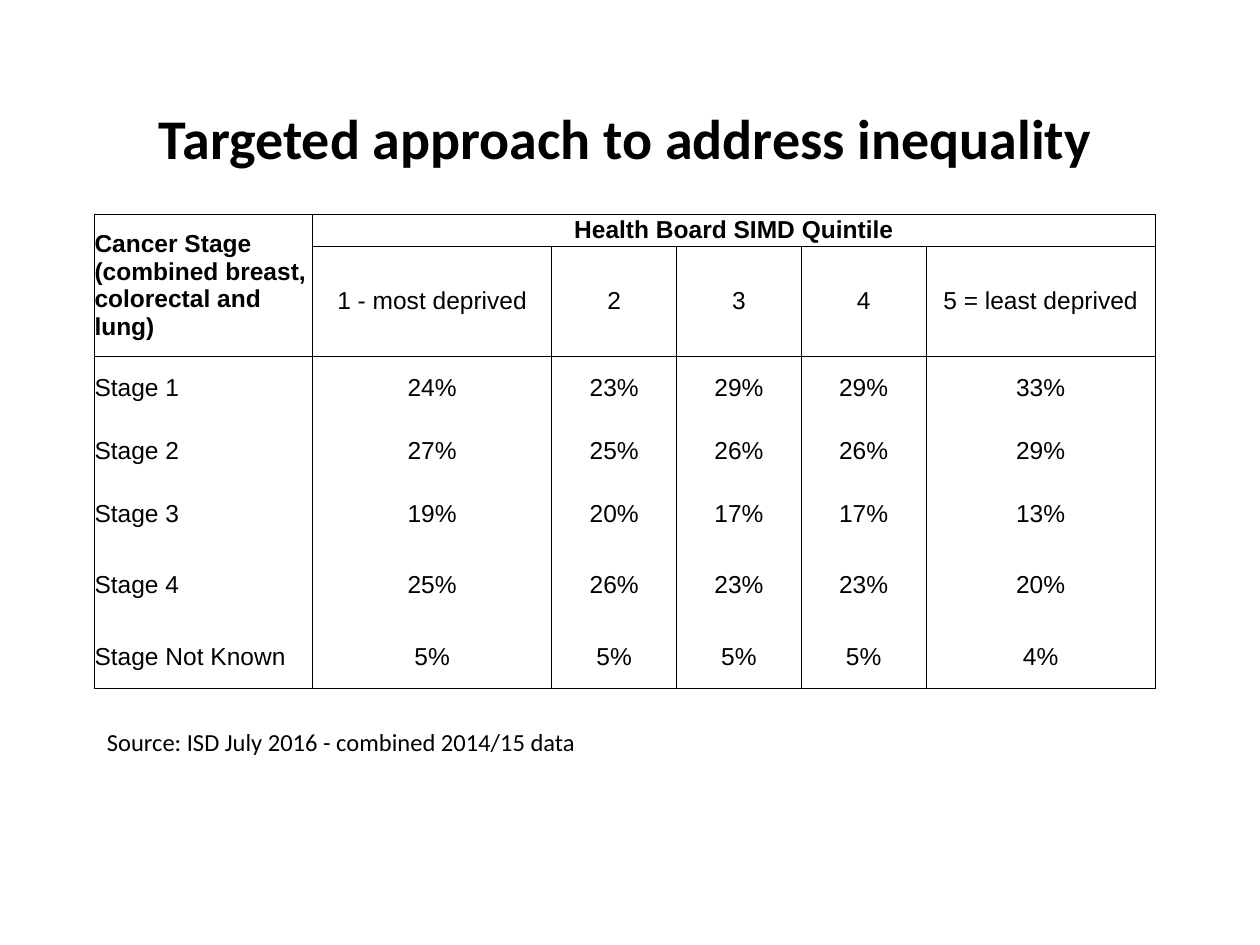
from lxml.etree import SubElement
from pptx import Presentation
from pptx.dml.color import RGBColor
from pptx.enum.text import MSO_ANCHOR, MSO_AUTO_SIZE, PP_ALIGN
from pptx.oxml.ns import qn
from pptx.util import Inches, Pt

WIDTH, HEIGHT = 10, 7.5
BLACK, WHITE = "000000", "FFFFFF"
COLUMNS = [1.73, 1.9, 0.99, 0.99, 0.99, 1.82]
ROWS = [0.25, 0.5, 0.5, 0.5, 0.5, 0.64, 0.5]
HEADER_ROWS = 2
CELLS = [
    ["Cancer Stage (combined breast, colorectal and lung)", "Health Board SIMD Quintile", "", "", "", ""],
    ["", "1 - most deprived", "2", "3", "4", "5 = least deprived"],
    ["Stage 1", "24%", "23%", "29%", "29%", "33%"],
    ["Stage 2", "27%", "25%", "26%", "26%", "29%"],
    ["Stage 3", "19%", "20%", "17%", "17%", "13%"],
    ["Stage 4", "25%", "26%", "23%", "23%", "20%"],
    ["Stage Not Known", "5%", "5%", "5%", "5%", "4%"],
]


def colour(value):
    return RGBColor.from_string(value)


def share_box(left, top, width, height):
    return (Inches(left * WIDTH), Inches(top * HEIGHT),
            Inches(width * WIDTH), Inches(height * HEIGHT))


def place(shape, box):
    shape.left, shape.top, shape.width, shape.height = box


def write(frame, text, size, font, bold=False, align=PP_ALIGN.LEFT):
    para = frame.paragraphs[0]
    para.alignment = align
    span = para.add_run()
    span.text = text
    span.font.size = Pt(size)
    span.font.name = font
    span.font.bold = bold
    span.font.color.rgb = colour(BLACK)


def set_borders(cell, sides):
    properties = cell._tc.get_or_add_tcPr()
    for side in "LRTB":
        line = SubElement(properties, qn(f"a:ln{side}"), w=str(Pt(0.5)))
        if side in sides:
            fill = SubElement(line, qn("a:solidFill"))
            SubElement(fill, qn("a:srgbClr"), val=BLACK)
        else:
            SubElement(line, qn("a:noFill"))


def row_sides(row):
    if row < HEADER_ROWS:
        return "LRTB"
    if row == HEADER_ROWS:
        return "LRT"
    return "LRB" if row == len(ROWS) - 1 else "LR"


def format_cell(cell, text, row, column):
    set_borders(cell, row_sides(row))
    cell.fill.solid()
    cell.fill.fore_color.rgb = colour(WHITE)
    cell.margin_left = cell.margin_right = cell.margin_top = cell.margin_bottom = 0
    cell.vertical_anchor = MSO_ANCHOR.MIDDLE
    if text:
        align = PP_ALIGN.CENTER if column else PP_ALIGN.LEFT
        write(cell.text_frame, text, 14, "Arial", row == 0, align)


def add_title(page, box):
    title = page.shapes.title
    place(title, box)
    title.text_frame.word_wrap = True
    title.text_frame.vertical_anchor = MSO_ANCHOR.MIDDLE
    write(title.text_frame, "Targeted approach to address inequality", 32, "Calibri", True, PP_ALIGN.CENTER)


def add_stage_table(page, box):
    frame = page.shapes.add_table(len(ROWS), len(COLUMNS), *box)
    table = frame.table
    table.first_row = table.horz_banding = False
    for column, width in zip(table.columns, COLUMNS):
        column.width = Inches(width)
    for row, height in zip(table.rows, ROWS):
        row.height = Inches(height)
    table.cell(0, 0).merge(table.cell(1, 0))
    table.cell(0, 1).merge(table.cell(0, len(COLUMNS) - 1))
    for row, texts in enumerate(CELLS):
        for column, text in enumerate(texts):
            format_cell(table.cell(row, column), text, row, column)
    place(frame, box)


def add_source_note(page, box):
    frame = page.shapes.add_textbox(*box).text_frame
    frame.word_wrap = True
    frame.auto_size = MSO_AUTO_SIZE.SHAPE_TO_FIT_TEXT
    write(frame, "Source: ISD July 2016 - combined 2014/15 data", 14, "Calibri")


def main():
    deck = Presentation()
    deck.slide_width, deck.slide_height = Inches(WIDTH), Inches(HEIGHT)
    page = deck.slides.add_slide(deck.slide_layouts[5])
    page.background.fill.solid()
    page.background.fill.fore_color.rgb = colour(WHITE)
    add_title(page, share_box(0.114, 0.06, 0.765, 0.17))
    add_stage_table(page, share_box(0.075, 0.227, 0.843, 0.473))
    add_source_note(page, share_box(0.075, 0.763, 0.638, 0.045))
    deck.save("out.pptx")


if __name__ == "__main__":
    main()
